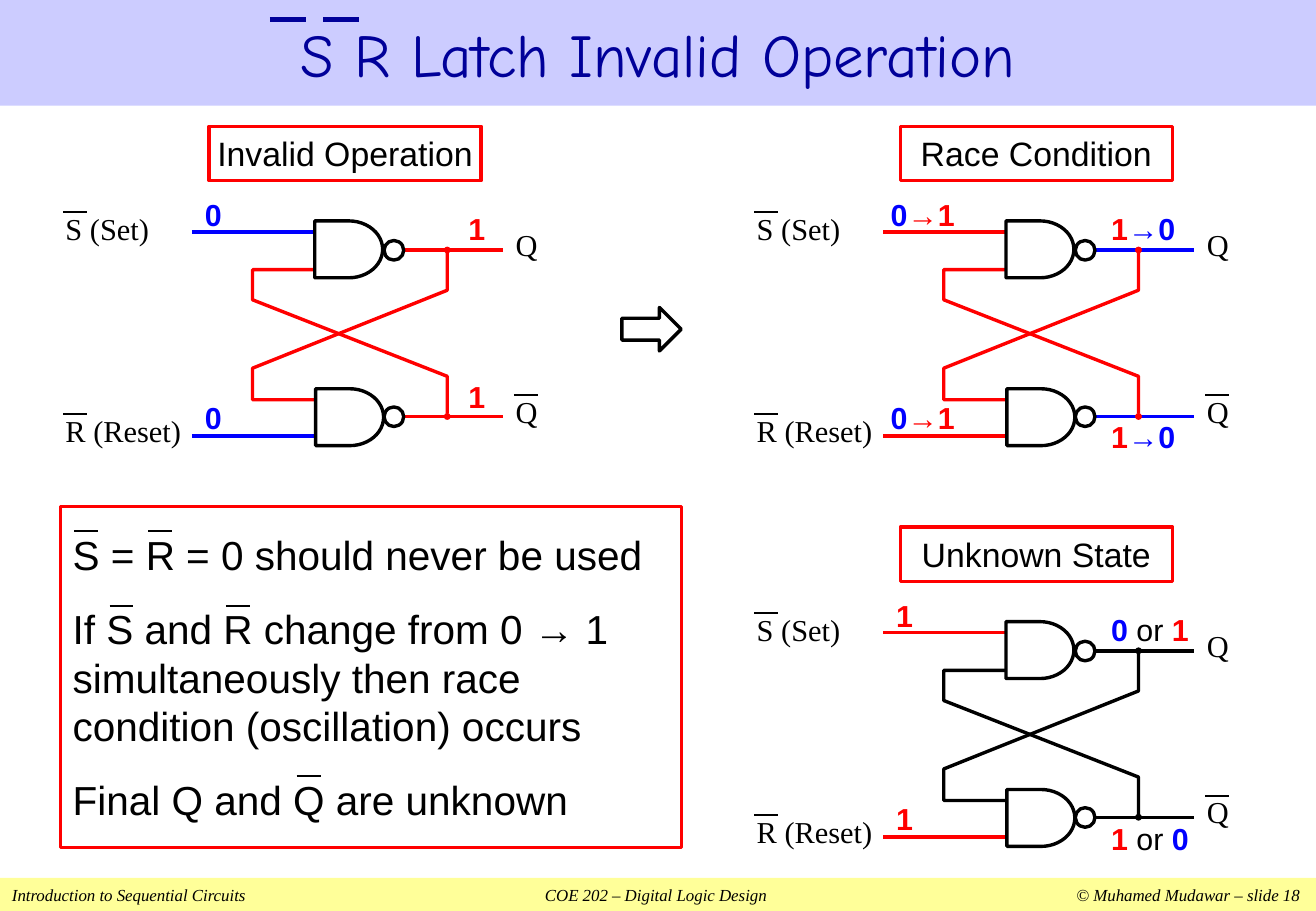
from pptx import Presentation, util as u
from pptx.dml.color import RGBColor
from pptx.enum import shapes as sh, text as tx
from pptx.oxml import ns, xmlchemy as xc

RED, BLUE, BLACK, NAVY = "FF0000", "0000FF", "000000", "000099"
SERIF, SANS = "Times New Roman", "Arial"
LEFT, MID = tx.PP_ALIGN.LEFT, tx.PP_ALIGN.CENTER
KIND = sh.MSO_SHAPE
BAR = 0.5


def cms(*vals):
    """Turn centimetre values into lengths."""
    return [u.Cm(v) for v in vals]


def hue(tint):
    """Turn a hex string into a colour."""
    return RGBColor.from_string(tint)


def node(root, tag, **attrs):
    """Append a drawing element to a parent and return it."""
    kid = xc.OxmlElement(tag)
    for key, val in attrs.items():
        kid.set(key, str(val))
    root.append(kid)
    return kid


def ink(item, tint, size):
    """Give an item a solid outline with round corners."""
    item.line.color.rgb = hue(tint)
    item.line.width = u.Pt(size)
    edge = item.element.spPr.find(ns.qn("a:ln"))
    node(edge, "a:round")
    return edge


def write(para, runs, font, size, bold=False, slant=False):
    """Add coloured runs to a paragraph."""
    for words, tint in runs:
        run = para.add_run()
        run.text = words
        run.font.name = font
        run.font.size = u.Pt(size)
        run.font.bold = bold and tint != BLACK
        run.font.italic = slant
        run.font.color.rgb = hue(tint)


def frame(item, wrap=True, pad=None):
    """Set up the text frame of an item, anchored in the middle."""
    body = item.text_frame
    body.word_wrap = wrap
    body.auto_size = tx.MSO_AUTO_SIZE.NONE
    body.vertical_anchor = tx.MSO_ANCHOR.MIDDLE
    if pad is not None:
        body.margin_left = body.margin_right = u.Cm(pad)
        body.margin_top = body.margin_bottom = u.Cm(pad)
    return body


def label(slide, box, runs, font=SERIF, align=MID, bold=False):
    """Add a small text label."""
    item = slide.shapes.add_textbox(*cms(*box))
    para = frame(item, pad=0).paragraphs[0]
    para.alignment = align
    write(para, runs, font, 18, bold)


def form(slide, kind, box, fill=None, edge=None):
    """Add a preset shape with an optional fill and outline."""
    item = slide.shapes.add_shape(kind, *cms(*box))
    item.shadow.inherit = False
    if fill:
        item.fill.solid()
        item.fill.fore_color.rgb = hue(fill)
    else:
        item.fill.background()
    if edge:
        ink(item, edge, 2)
    else:
        item.line.fill.background()
    return item


def rule(slide, x, y, span, tint=BLACK, size=1):
    """Add a horizontal line."""
    item = slide.shapes.add_connector(
        sh.MSO_CONNECTOR.STRAIGHT, *cms(x, y, x + span, y))
    ink(item, tint, size)
    node(item.element.spPr, "a:effectLst")


def wire(slide, spots, tint):
    """Add a feedback wire that starts with a dot."""
    first, *rest = [cms(*spot) for spot in spots]
    pen = slide.shapes.build_freeform(*first)
    pen.add_line_segments(rest, close=False)
    item = pen.convert_to_shape()
    item.shadow.inherit = False
    item.fill.background()
    node(ink(item, tint, 2), "a:headEnd", type="oval", w="sm", len="sm")


def caption(slide, box, words):
    """Add a red framed caption."""
    item = form(slide, KIND.RECTANGLE, box, edge=RED)
    para = frame(item, wrap=False, pad=0).paragraphs[0]
    para.alignment = MID
    write(para, [(words, BLACK)], SANS, 20)


def latch(slide, dx, dy, name, tints, ins, outs):
    """Draw a latch of two cross-coupled gates with its signal values."""
    feed, loop, exit = tints
    wide, value = ins
    caption(slide, (dx + 4.37, dy + 2.64, 5.69, 1.14), name)
    for words, y in (("S (Set)", 4.39), ("R (Reset)", 8.61)):
        label(slide, (dx + 1.37, dy + y, 2.46, 0.79), [(words, BLACK)], align=LEFT)
        rule(slide, dx + 1.32, dy + y + 0.05, BAR)
    for y in (4.72, 8.2):
        label(slide, (dx + 10.69, dy + y, 0.64, 0.79), [("Q", BLACK)])
    rule(slide, dx + 10.74, dy + 8.26, BAR)
    for y in (4.85, 9.12):
        rule(slide, dx + 4.01, dy + y, 2.57, feed, 2)
    for y in (5.23, 8.71):
        rule(slide, dx + 8.46, dy + y, 2.06, exit, 2)
        form(slide, KIND.OVAL, (dx + 8.03, dy + y - 0.2, 0.41, 0.41), "FFFFFF", BLACK)
    for ys in ((5.23, 6.07, 7.7, 8.36), (8.71, 7.87, 6.27, 5.64)):
        xs = (9.35, 9.35, 5.28, 5.28, 6.58)
        wire(slide, [(dx + x, dy + y) for x, y in zip(xs, ys + ys[-1:])], loop)
    for x, y in ((6.58, 4.62), (6.6, 8.13)):
        form(slide, KIND.FLOWCHART_DELAY, (dx + x, dy + y, 1.42, 1.19), "FFFFFF", BLACK)
    for y in (4.09, 8.33):
        label(slide, (dx + 4.14, dy + y, wide, 0.79), value, SANS, bold=True)
    for x, y, span, runs in outs:
        label(slide, (dx + x, dy + y, span, 0.79), runs, SANS, bold=True)


def title(slide):
    """Place and format the slide title with its two overbars."""
    head = slide.shapes.title
    head.left, head.top, head.width, head.height = cms(0, 0, 27.51, 2.21)
    head.fill.solid()
    head.fill.fore_color.rgb = hue("CCCCFF")
    para = frame(head).paragraphs[0]
    para.alignment = MID
    write(para, [("S R Latch Invalid Operation", NAVY)], "Comic Neue", 36)
    for x in (5.64, 6.76):
        rule(slide, x, 0.41, 0.75, NAVY, 3)


def footer(slide):
    """Add the footer band with tabbed text."""
    band = form(slide, KIND.RECTANGLE, (0, 18.36, 27.51, 0.69), "FFFF99")
    para = frame(band).paragraphs[0]
    para.alignment = LEFT
    stops = node(para._p.get_or_add_pPr(), "a:tabLst")
    for spot, side in ((13.46, "ctr"), (26.92, "r")):
        node(stops, "a:tab", pos=u.Cm(spot), algn=side)
    words = ("Introduction to Sequential Circuits\tCOE 202 – Digital Logic Design"
             "\t© Muhamed Mudawar – slide 18")
    write(para, [(words, BLACK)], SERIF, 10, slant=True)


def note(slide):
    """Add the framed explanation with its overbars."""
    body = frame(form(slide, KIND.RECTANGLE, (1.27, 10.59, 12.98, 7.14), edge=RED))
    lines = ("S = R = 0 should never be used",
             "If S and R change from 0 → 1 simultaneously then race "
             "condition (oscillation) occurs",
             "Final Q and Q are unknown")
    for i, words in enumerate(lines):
        para = body.add_paragraph() if i else body.paragraphs[0]
        para.alignment = LEFT
        para.space_before = u.Pt(15)
        write(para, [(words, BLACK)], SANS, 24)
    for x, y in ((1.55, 11.1), (3.1, 11.1), (2.29, 12.67), (4.72, 12.67), (6.2, 16.23)):
        rule(slide, x, y, BAR, size=1.5)


def main():
    """Build the slide and save it."""
    deck = Presentation()
    deck.slide_width, deck.slide_height = cms(27.51, 19.05)
    slide = deck.slides.add_slide(deck.slide_layouts[5])
    footer(slide)
    title(slide)
    one, fall = [("1", RED)], [("1", RED), ("→0", BLUE)]
    latch(slide, 0, 0, "Invalid Operation", (BLUE, RED, RED),
          (0.64, [("0", BLUE)]),
          [(9.65, 4.39, 0.64, one), (9.65, 7.9, 0.64, one)])
    form(slide, KIND.RIGHT_ARROW, (13, 6.43, 1.24, 0.91), "FFFFFF", BLACK)
    latch(slide, 14.45, 0, "Race Condition", (RED, RED, BLUE),
          (1.4, [("0", BLUE), ("→1", RED)]),
          [(8.61, 4.39, 1.68, fall), (8.61, 8.74, 1.68, fall)])
    latch(slide, 14.45, 8.38, "Unknown State", (RED, BLACK, BLACK),
          (0.64, one),
          [(8.64, 4.39, 1.9, [("0 ", BLUE), ("or ", BLACK), ("1", RED)]),
           (8.64, 8.76, 1.9, [("1 ", RED), ("or", BLACK), (" 0", BLUE)])])
    note(slide)
    deck.save("out.pptx")


if __name__ == "__main__":
    main()
